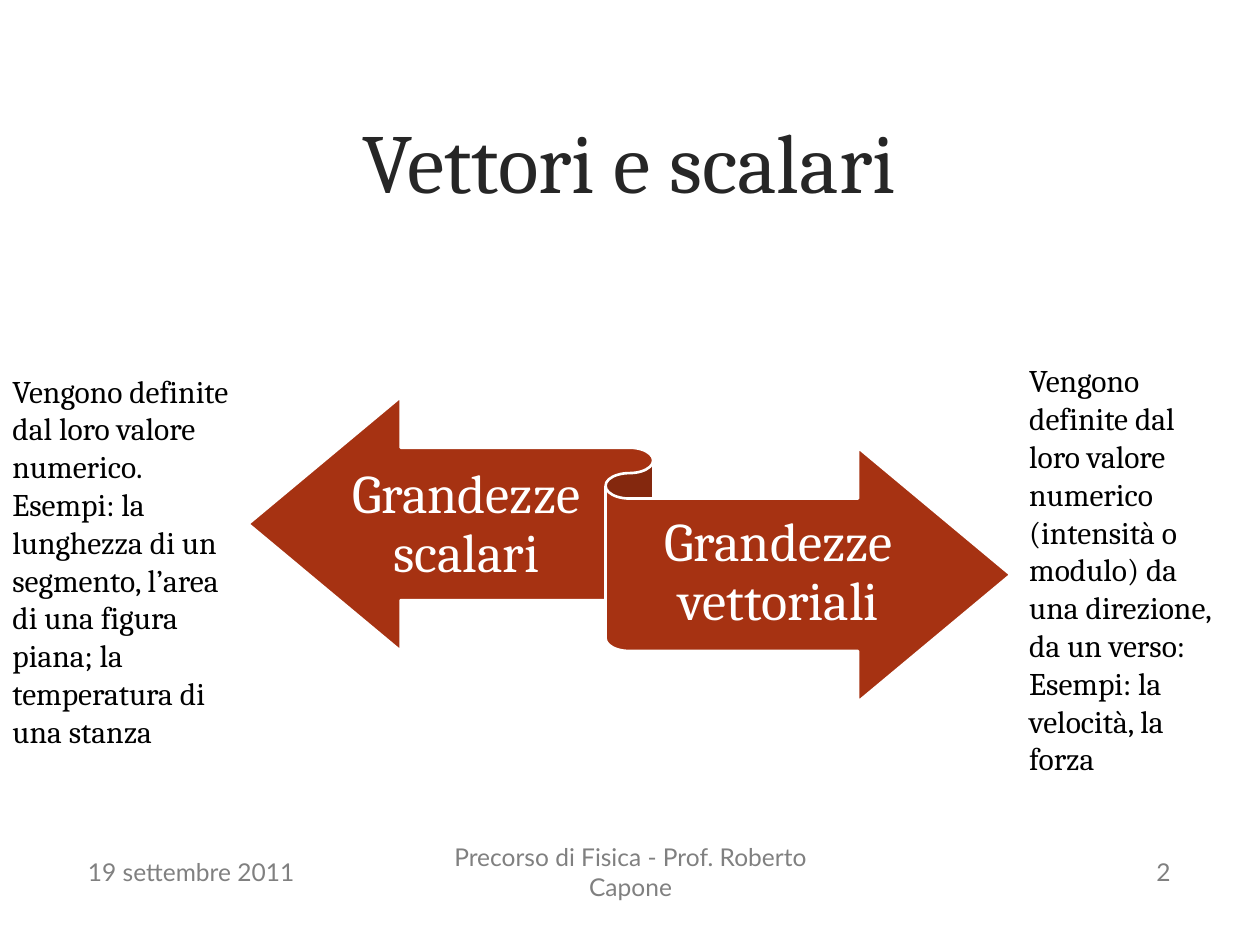
from dataclasses import dataclass

from pptx import Presentation
from pptx.dml.color import RGBColor
from pptx.enum.shapes import MSO_SHAPE
from pptx.enum.text import MSO_ANCHOR, PP_ALIGN
from pptx.util import Inches, Pt


@dataclass(frozen=True)
class Theme:
    serif: str = "Cambria"
    sans: str = "Lato"
    title: str = "262626"
    body: str = "000000"
    footer: str = "808080"
    accent: str = "A63212"
    white: str = "FFFFFF"
    title_size: int = 48
    label_size: int = 31
    body_size: int = 18
    footer_size: int = 14


THEME = Theme()


def add_text(s, box, paragraphs, font, size, color,
             align=PP_ALIGN.LEFT, anchor=MSO_ANCHOR.MIDDLE):
    sp = s.shapes.add_textbox(*map(Inches, box))
    tf = sp.text_frame
    tf.word_wrap = True
    tf.vertical_anchor = anchor
    for i, text in enumerate(paragraphs):
        p = tf.paragraphs[0] if i == 0 else tf.add_paragraph()
        p.alignment = align
        r = p.add_run()
        r.text = text
        r.font.name = font
        r.font.size = Pt(size)
        r.font.color.rgb = RGBColor.from_string(color)
    return tf


def add_title(s, text):
    add_text(s, (0.6, 0.48, 8.79, 1.58), [text], THEME.serif,
             THEME.title_size, THEME.title, PP_ALIGN.CENTER)


def add_ribbon(s):
    sp = s.shapes.add_shape(MSO_SHAPE.LEFT_RIGHT_RIBBON, Inches(1.97),
                            Inches(3.15), Inches(6.05), Inches(2.42))
    sp.shadow.inherit = False
    sp.fill.solid()
    sp.fill.fore_color.rgb = RGBColor.from_string(THEME.accent)
    sp.line.color.rgb = RGBColor.from_string(THEME.white)
    sp.line.width = Pt(1.5)


def add_ribbon_label(s, box, text):
    tf = add_text(s, box, [text], THEME.serif, THEME.label_size,
                  THEME.white, PP_ALIGN.CENTER)
    tf.margin_left = tf.margin_right = 0
    tf.margin_top, tf.margin_bottom = Inches(0.12), Inches(0.13)
    tf.paragraphs[0].line_spacing = 0.9


def add_definition(s, box, paragraphs):
    add_text(s, box, paragraphs, THEME.serif, THEME.body_size, THEME.body,
             anchor=MSO_ANCHOR.TOP)


def add_footer(s, left, width, text, align):
    add_text(s, (left, 6.72, width, 0.4), [text], THEME.sans,
             THEME.footer_size, THEME.footer, align)


def main():
    prs = Presentation()
    prs.slide_width, prs.slide_height = Inches(10), Inches(7.5)
    s = prs.slides.add_slide(prs.slide_layouts[6])

    add_title(s, "Vettori e scalari")
    add_ribbon(s)
    add_ribbon_label(s, (2.7, 3.58, 2, 1.19), "Grandezze scalari")
    add_ribbon_label(s, (5, 3.96, 2.36, 1.19), "Grandezze vettoriali")

    add_footer(s, 0.6, 2.33, "19 settembre 2011", PP_ALIGN.LEFT)
    add_footer(s, 3.42, 3.17, "Precorso di Fisica - Prof. Roberto Capone",
               PP_ALIGN.CENTER)
    add_footer(s, 7.06, 2.33, "2", PP_ALIGN.RIGHT)

    add_definition(s, (0, 2.9, 2.01, 3.13), [
        "Vengono definite dal loro valore numerico.",
        "Esempi: la lunghezza di un segmento, l’area di una figura piana; "
        "la temperatura di una stanza",
    ])
    add_definition(s, (8.07, 2.82, 1.73, 3.43), [
        "Vengono definite dal loro valore numerico (intensità o modulo) "
        "da una direzione, da un verso:",
        "Esempi: la velocità, la forza",
    ])
    prs.save("out.pptx")


if __name__ == "__main__":
    main()
